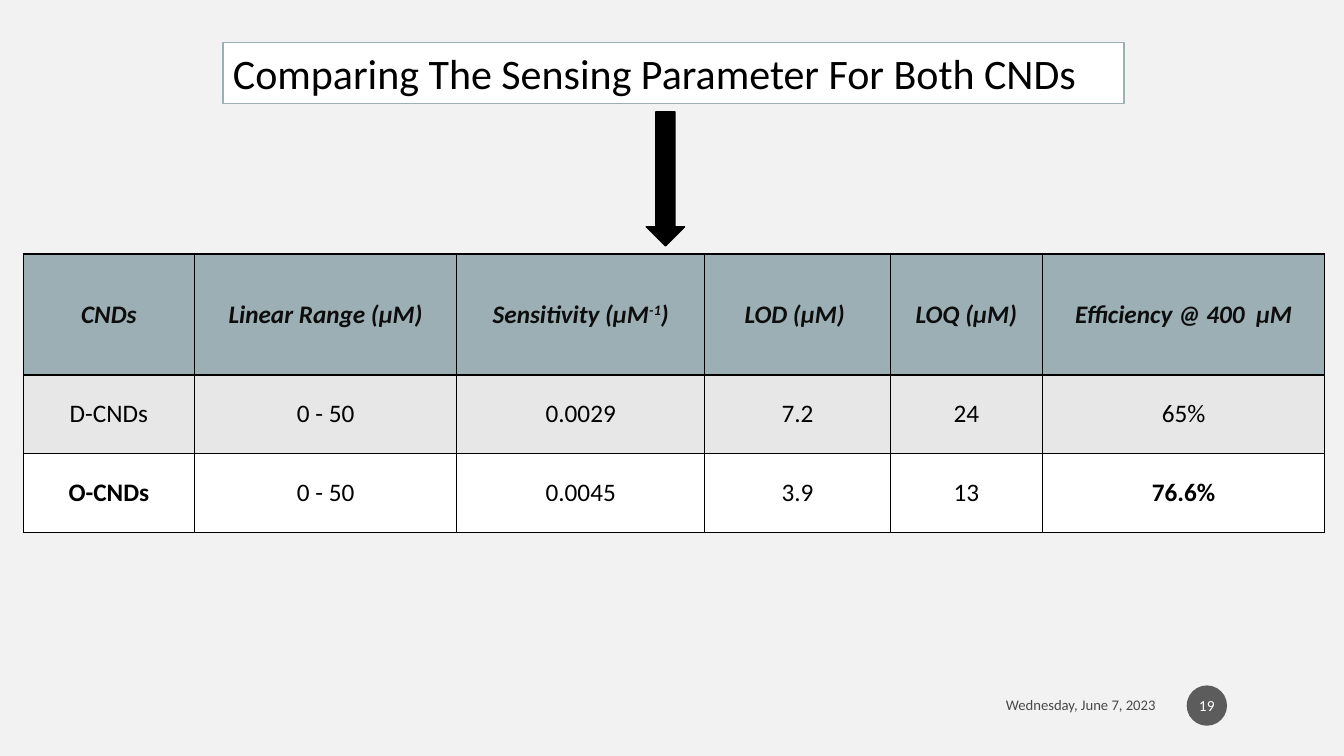
from dataclasses import dataclass

from lxml import etree
from pptx import Presentation
from pptx.dml.color import RGBColor
from pptx.enum.shapes import MSO_SHAPE
from pptx.enum.text import MSO_ANCHOR, MSO_AUTO_SIZE, PP_ALIGN
from pptx.oxml.ns import qn
from pptx.util import Inches, Pt

OVAL, DOWN_ARROW = MSO_SHAPE.OVAL, MSO_SHAPE.DOWN_ARROW
TOP, MIDDLE = MSO_ANCHOR.TOP, MSO_ANCHOR.MIDDLE
LEFT, CENTER, RIGHT = PP_ALIGN.LEFT, PP_ALIGN.CENTER, PP_ALIGN.RIGHT
NO_AUTOFIT = MSO_AUTO_SIZE.NONE
TITLE_ONLY = 5


@dataclass(frozen=True)
class Theme:
    font: str = "Calibri"
    background: str = "F2F2F2"
    accent: str = "9BAFB5"
    band: str = "E7E7E7"
    white: str = "FFFFFF"
    black: str = "000000"
    header_text: str = "0D0D0D"
    badge: str = "1D1D1D"
    soft_opacity: int = 70
    title_size: float = 30
    table_size: float = 18
    number_size: float = 11
    date_size: float = 10.5
    line_width: float = 1


COLUMN_WIDTHS = [1.7, 2.6, 2.46, 1.84, 1.51, 2.8]
ROW_HEIGHTS = [1.2, 0.78, 0.78]
HEADERS = ["CNDs", "Linear Range (μM)", ("Sensitivity (μM", "-1", ")"),
           "LOD (μM) ", "LOQ (μM)", "Efficiency @ 400  μM"]
RESULTS = [
    ["D-CNDs", "0 - 50", "0.0029", "7.2", "24", "65%"],
    ["O-CNDs", "0 - 50", "0.0045", "3.9", "13", "76.6%"],
]
BEST_VALUES = {"O-CNDs", "76.6%"}


def set_values(target, values):
    for name, value in values.items():
        setattr(target, name, value)


def set_opacity(parent, percent):
    color = next(parent.iter(qn("a:srgbClr")))
    etree.SubElement(color, qn("a:alpha")).set("val", str(percent * 1000))


class SlideBuilder:
    def __init__(self, presentation, theme):
        self.theme = theme
        self.slide = presentation.slides.add_slide(presentation.slide_layouts[TITLE_ONLY])
        self.paint(self.slide.background.fill, theme.background)

    def paint(self, fill, color):
        fill.solid()
        fill.fore_color.rgb = RGBColor.from_string(color)

    def outline(self, shape, color):
        self.paint(shape.line.fill, color)
        shape.line.width = Pt(self.theme.line_width)

    def place(self, shape, box):
        names = ("left", "top", "width", "height")
        set_values(shape, dict(zip(names, map(Inches, box))))

    def add_text(self, frame, parts, size, color, align, **font_values):
        paragraph = frame.paragraphs[0]
        paragraph.alignment = align
        for text in parts:
            run = paragraph.add_run()
            run.text = text
            set_values(run.font, {"name": self.theme.font, "size": Pt(size), **font_values})
            run.font.color.rgb = RGBColor.from_string(color)
        return paragraph.runs

    def title(self, text, box):
        shape = self.slide.shapes.title
        self.place(shape, box)
        self.paint(shape.fill, self.theme.white)
        self.outline(shape, self.theme.accent)
        set_values(shape.text_frame, {"word_wrap": True, "auto_size": NO_AUTOFIT,
                                      "vertical_anchor": TOP})
        self.add_text(shape.text_frame, [text], self.theme.title_size, self.theme.black, LEFT)

    def shape(self, kind, box, color):
        shape = self.slide.shapes.add_shape(kind, *map(Inches, box))
        shape.shadow.inherit = False
        self.paint(shape.fill, color)
        return shape

    def arrow(self, box):
        self.outline(self.shape(DOWN_ARROW, box, self.theme.black), self.theme.black)

    def badge(self, text, box):
        shape = self.shape(OVAL, box, self.theme.badge)
        set_opacity(shape.element.spPr, self.theme.soft_opacity)
        shape.line.fill.background()
        set_values(shape.text_frame, {"margin_left": Inches(0.02), "margin_right": Inches(0.02),
                                      "vertical_anchor": MIDDLE})
        self.add_text(shape.text_frame, [text], self.theme.number_size, self.theme.white, CENTER)

    def date(self, text, box):
        frame = self.slide.shapes.add_textbox(*map(Inches, box)).text_frame
        set_values(frame, {"word_wrap": True, "vertical_anchor": MIDDLE})
        runs = self.add_text(frame, [text], self.theme.date_size, self.theme.black, RIGHT)
        set_opacity(runs[0]._r, self.theme.soft_opacity)

    def cell_borders(self, cell):
        properties = cell._tc.get_or_add_tcPr()
        for index, side in enumerate(("lnL", "lnR", "lnT", "lnB")):
            border = etree.Element(qn(f"a:{side}"), w=str(Pt(self.theme.line_width)))
            fill = etree.SubElement(border, qn("a:solidFill"))
            etree.SubElement(fill, qn("a:srgbClr"), val=self.theme.black)
            properties.insert(index, border)

    def table(self, rows, left, top):
        theme = self.theme
        box = (left, top, sum(COLUMN_WIDTHS), sum(ROW_HEIGHTS))
        table = self.slide.shapes.add_table(
            len(rows), len(COLUMN_WIDTHS), *map(Inches, box)).table
        for column, width in zip(table.columns, COLUMN_WIDTHS):
            column.width = Inches(width)
        for row, height in zip(table.rows, ROW_HEIGHTS):
            row.height = Inches(height)
        fills = (theme.accent, theme.band, theme.white)
        for row_index, values in enumerate(rows):
            header = row_index == 0
            for column_index, value in enumerate(values):
                cell = table.cell(row_index, column_index)
                cell.vertical_anchor = MIDDLE
                self.paint(cell.fill, fills[row_index])
                self.cell_borders(cell)
                parts = value if isinstance(value, tuple) else (value,)
                runs = self.add_text(cell.text_frame, parts, theme.table_size,
                                     theme.header_text if header else theme.black, CENTER,
                                     bold=header or value in BEST_VALUES, italic=header)
                for superscript in runs[1:2]:
                    superscript._r.get_or_add_rPr().set("baseline", "30000")


def main():
    presentation = Presentation()
    set_values(presentation, {"slide_width": Inches(13.33), "slide_height": Inches(7.5)})
    builder = SlideBuilder(presentation, Theme())
    builder.date("Wednesday, June 7, 2023", (8.55, 6.82, 3.01, 0.35))
    builder.badge("19", (11.77, 6.8, 0.4, 0.4))
    builder.table([HEADERS, *RESULTS], 0.23, 2.52)
    builder.title("Comparing The Sensing Parameter For Both CNDs", (2.21, 0.42, 8.94, 0.61))
    builder.arrow((6.41, 1.11, 0.38, 1.33))
    presentation.save("out.pptx")


if __name__ == "__main__":
    main()
